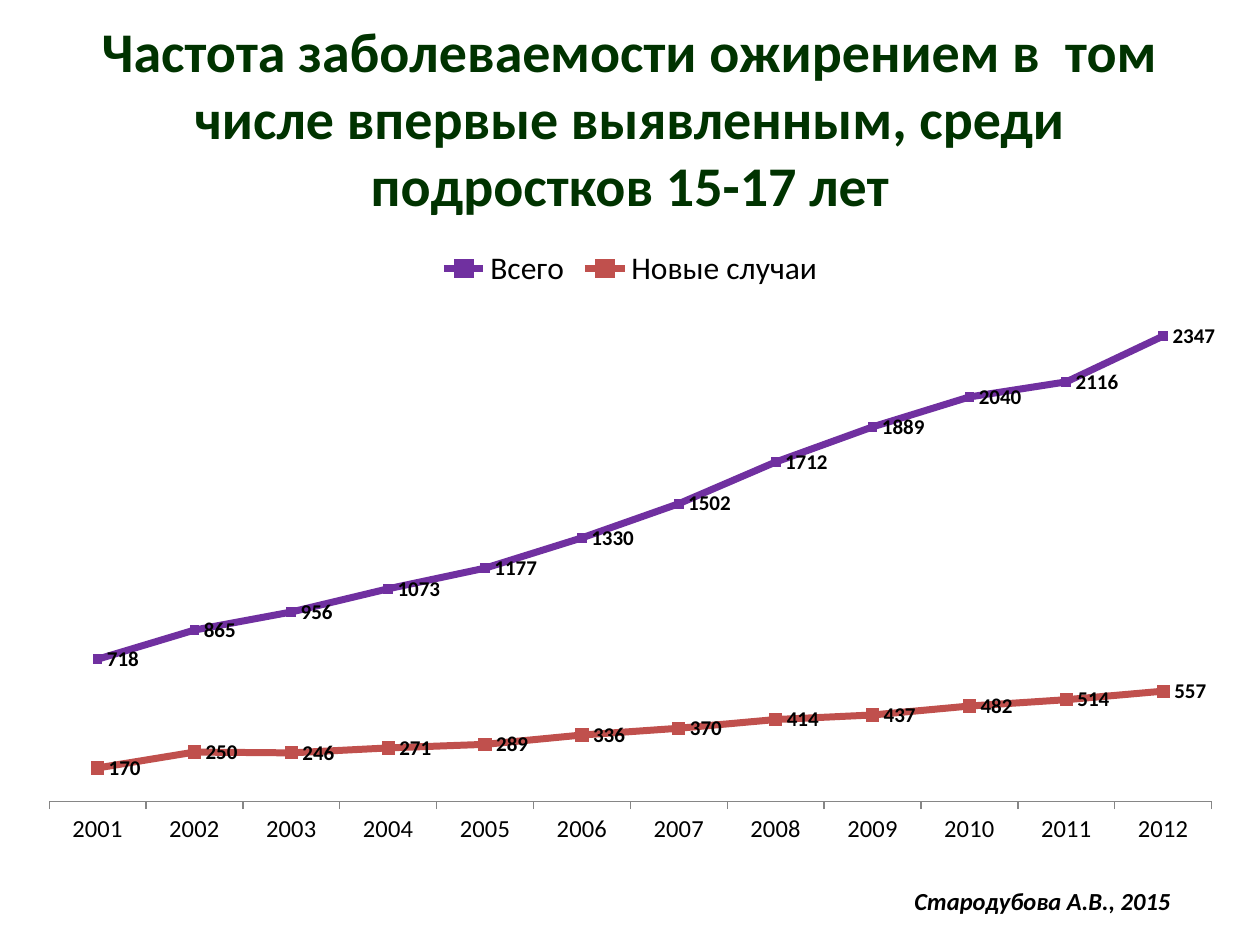
from lxml import etree
from pptx import Presentation
from pptx.chart.data import CategoryChartData
from pptx.dml.color import RGBColor
from pptx.enum.chart import (XL_CHART_TYPE, XL_LABEL_POSITION, XL_LEGEND_POSITION,
                             XL_MARKER_STYLE, XL_TICK_MARK)
from pptx.enum.text import MSO_ANCHOR, PP_ALIGN
from pptx.oxml.ns import qn
from pptx.util import Emu, Pt

PX = 914400 / 126
FONT = "Calibri"
LINE_MARKERS = XL_CHART_TYPE.LINE_MARKERS
SQUARE = XL_MARKER_STYLE.SQUARE
LABEL_RIGHT = XL_LABEL_POSITION.RIGHT
LEGEND_TOP = XL_LEGEND_POSITION.TOP
TICK_OUT, TICK_NONE = XL_TICK_MARK.OUTSIDE, XL_TICK_MARK.NONE
MIDDLE, TOP = MSO_ANCHOR.MIDDLE, MSO_ANCHOR.TOP
CENTER, LEFT = PP_ALIGN.CENTER, PP_ALIGN.LEFT


def place(*lengths):
    return [Emu(round(length * PX)) for length in lengths]


def style(font, size, color, bold=False, italic=False):
    font.name, font.size, font.bold, font.italic = FONT, Pt(size), bold, italic
    font.color.rgb = RGBColor.from_string(color)


deck = Presentation()
deck.slide_width, deck.slide_height = place(1260, 945)
page = deck.slides.add_slide(deck.slide_layouts[6])

# Title and source note
texts = [
    ("Частота заболеваемости ожирением в  том числе впервые выявленным, среди подростков 15-17 лет",
     (63, 38, 1134, 158), 32, "003300", False, True, MIDDLE, CENTER),
    ("Стародубова А.В., 2015",
     (902, 880, 284, 42), 14, "000000", True, False, TOP, LEFT),
]
for words, bounds, size, color, italic, wrap, anchor, align in texts:
    box = page.shapes.add_textbox(*place(*bounds))
    box.text_frame.word_wrap = wrap
    box.text_frame.vertical_anchor = anchor
    para = box.text_frame.paragraphs[0]
    para.alignment = align
    span = para.add_run()
    span.text = words
    style(span.font, size, color, bold=True, italic=italic)

# Incidence by year
series_rows = [
    ("Всего", "7030A0", 5,
     (718, 865, 956, 1073, 1177, 1330, 1502, 1712, 1889, 2040, 2116, 2347)),
    ("Новые случаи", "C0504D", 7,
     (170, 250, 246, 271, 289, 336, 370, 414, 437, 482, 514, 557)),
]
data = CategoryChartData()
data.categories = [str(year) for year in range(2001, 2013)]
for name, color, marker_size, values in series_rows:
    data.add_series(name, values)
chart = page.shapes.add_chart(LINE_MARKERS, *place(25, 234, 1211, 624), data).chart
chart.has_title = False
style(chart.font, 18, "000000")
chart.has_legend = True
chart.legend.position = LEGEND_TOP
chart.legend.include_in_layout = False

# Axes
years = chart.category_axis
years.major_tick_mark, years.minor_tick_mark = TICK_OUT, TICK_NONE
years.format.line.color.rgb = RGBColor.from_string("868686")
style(years.tick_labels.font, 14, "000000")
scale = chart.value_axis
scale.minimum_scale, scale.maximum_scale = 0, 2500
scale.has_major_gridlines = False
scale.visible = False

# Lines, markers and value labels
for series, (name, color, marker_size, values) in zip(chart.plots[0].series, series_rows):
    rgb = RGBColor.from_string(color)
    series.smooth = False
    series.format.line.width = Pt(4)
    series.format.line.color.rgb = rgb
    series.marker.style = SQUARE
    series.marker.size = marker_size
    series.marker.format.fill.solid()
    series.marker.format.fill.fore_color.rgb = rgb
    series.marker.format.line.color.rgb = rgb
    labels = series.data_labels
    labels.show_value = True
    labels.position = LABEL_RIGHT
    style(labels.font, 12, "000000", bold=True)

# Inner plot area, as fractions of the chart frame
plot_area = chart.plots[0]._element.getparent()
layout = plot_area.find(qn("c:layout"))
if layout is None:
    layout = etree.Element(qn("c:layout"))
    plot_area.insert(0, layout)
manual = etree.SubElement(layout, qn("c:manualLayout"))
for tag, value in (("layoutTarget", "inner"), ("xMode", "edge"), ("yMode", "edge"),
                   ("x", "0.02"), ("y", "0.115"), ("w", "0.96"), ("h", "0.795")):
    etree.SubElement(manual, qn("c:" + tag)).set("val", value)

deck.save("out.pptx")
